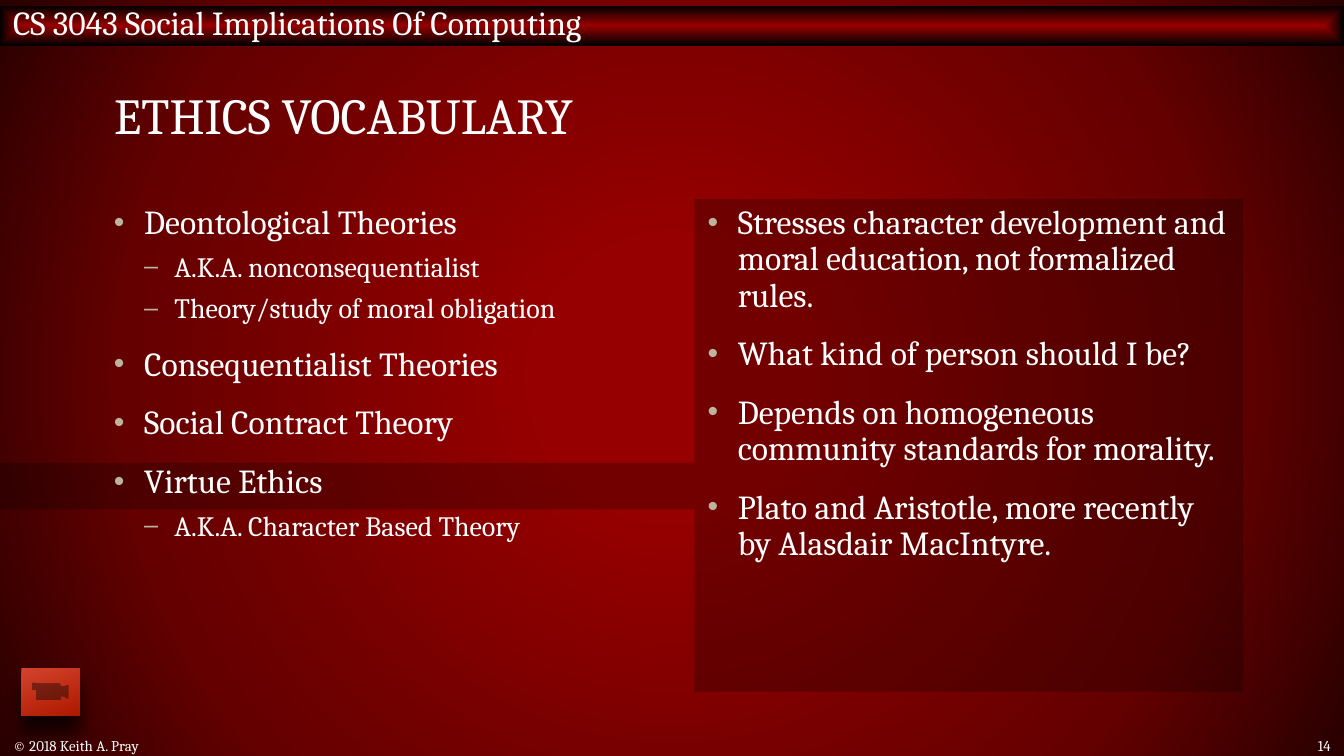
"""Build the ethics vocabulary slide."""
from dataclasses import dataclass

from lxml import etree
from pptx import Presentation
from pptx.dml.color import RGBColor
from pptx.enum.shapes import MSO_SHAPE
from pptx.enum.text import MSO_ANCHOR, MSO_AUTO_SIZE, PP_ALIGN
from pptx.oxml.ns import qn
from pptx.util import Pt

RECTANGLE = MSO_SHAPE.RECTANGLE
MOVIE_BUTTON = MSO_SHAPE.ACTION_BUTTON_MOVIE
TOP, MIDDLE = MSO_ANCHOR.TOP, MSO_ANCHOR.MIDDLE
LEFT, RIGHT = PP_ALIGN.LEFT, PP_ALIGN.RIGHT
NO_AUTO_SIZE = MSO_AUTO_SIZE.NONE
FONT = "Cambria"
COLOURS = {
    "text": "FFFFFF", "bullet": "BCB49E", "black": "000000",
    "red": "960000", "dark_red": "650000", "deep_red": "290000",
    "button_light": "D3432B", "button_dark": "AE1900",
}


@dataclass(frozen=True)
class Box:
    """Position and size in points."""
    left: float
    top: float
    width: float
    height: float

    def lengths(self):
        """Return the four lengths for a new shape."""
        return Pt(self.left), Pt(self.top), Pt(self.width), Pt(self.height)


@dataclass(frozen=True)
class Level:
    """Look of one bullet level."""
    size: float
    indent: float
    space_before: float
    character: str


@dataclass(frozen=True)
class Item:
    """One bulleted line."""
    text: str
    level: int = 0


LEVELS = (Level(18, 16.2, 12, "•"), Level(15, 32.4, 6, "–"))
HANGING = 16.2
COLUMN_TOP, COLUMN_WIDTH, COLUMN_HEIGHT = 106.5, 294, 264
LEFT_COLUMN = Box(54, COLUMN_TOP, COLUMN_WIDTH, COLUMN_HEIGHT)
RIGHT_COLUMN = Box(372, COLUMN_TOP, COLUMN_WIDTH, COLUMN_HEIGHT)
HIGHLIGHT = Box(0, 248, RIGHT_COLUMN.left, 25)
THEORIES = (
    Item("Deontological Theories"),
    Item("A.K.A. nonconsequentialist", 1),
    Item("Theory/study of moral obligation", 1),
    Item("Consequentialist Theories"),
    Item("Social Contract Theory"),
    Item("Virtue Ethics"),
    Item("A.K.A. Character Based Theory", 1),
)
VIRTUE_NOTES = (
    Item("Stresses character development and moral education, not formalized rules."),
    Item("What kind of person should I be?"),
    Item("Depends on homogeneous community standards for morality."),
    Item("Plato and Aristotle, more recently by Alasdair MacIntyre."),
)


def add_child(parent, tag: str, **attributes):
    """Append an XML child and return it."""
    return etree.SubElement(parent, qn(tag), attributes)


def set_gradient(fill, element, stops, path: str = "", angle: int = 0) -> None:
    """Give a fill its colour stops and either a path or an angle."""
    fill.gradient()
    gradient = element.find(".//" + qn("a:gradFill"))
    for child in list(gradient):
        gradient.remove(child)
    stop_list = add_child(gradient, "a:gsLst")
    for position, colour in stops:
        stop = add_child(stop_list, "a:gs", pos=str(position * 1000))
        add_child(stop, "a:srgbClr", val=COLOURS[colour])
    if path:
        shading = add_child(gradient, "a:path", path=path)
        add_child(shading, "a:fillToRect", l="50000", t="50000", r="50000", b="50000")
    else:
        add_child(gradient, "a:lin", ang=str(angle * 60000), scaled="0")


def add_plain_shape(slide, kind, box: Box):
    """Add a shape without line or shadow."""
    shape = slide.shapes.add_shape(kind, *box.lengths())
    shape.shadow.inherit = False
    shape.line.fill.background()
    return shape


def add_shade(slide, box: Box) -> None:
    """Add a translucent black panel."""
    shape = add_plain_shape(slide, RECTANGLE, box)
    shape.fill.solid()
    shape.fill.fore_color.rgb = RGBColor.from_string(COLOURS["black"])
    colour = shape.element.spPr.find(".//" + qn("a:srgbClr"))
    add_child(colour, "a:alpha", val="24000")


def add_run(paragraph, text: str, size: float) -> None:
    """Add one formatted run."""
    run = paragraph.add_run()
    run.text = text
    run.font.name = FONT
    run.font.size = Pt(size)
    run.font.color.rgb = RGBColor.from_string(COLOURS["text"])


def prepare_frame(shape, anchor, top: float = 3.6, bottom: float = 3.6):
    """Set wrapping, anchor and insets and return the text frame."""
    frame = shape.text_frame
    frame.word_wrap = True
    frame.auto_size = NO_AUTO_SIZE
    frame.vertical_anchor = anchor
    frame.margin_left = frame.margin_right = Pt(7.2)
    frame.margin_top, frame.margin_bottom = Pt(top), Pt(bottom)
    return frame


def add_bullets(slide, box: Box, items: tuple[Item, ...]) -> None:
    """Add a column of bulleted text."""
    frame = prepare_frame(slide.shapes.add_textbox(*box.lengths()), TOP)
    for index, item in enumerate(items):
        level = LEVELS[item.level]
        paragraph = frame.add_paragraph() if index else frame.paragraphs[0]
        paragraph.level = item.level
        paragraph.line_spacing = 0.9
        paragraph.space_before = Pt(level.space_before if index else 0)
        properties = paragraph._p.get_or_add_pPr()
        properties.set("marL", str(Pt(level.indent)))
        properties.set("indent", str(-Pt(HANGING)))
        add_child(add_child(properties, "a:buClr"), "a:srgbClr", val=COLOURS["bullet"])
        add_child(properties, "a:buSzPct", val="90000")
        add_child(properties, "a:buFont", typeface="Arial")
        add_child(properties, "a:buChar", char=level.character)
        add_run(paragraph, item.text, level.size)


def add_footer(slide, box: Box, text: str, alignment) -> None:
    """Add one small line at the foot of the slide."""
    frame = prepare_frame(slide.shapes.add_textbox(*box.lengths()), MIDDLE)
    frame.paragraphs[0].alignment = alignment
    add_run(frame.paragraphs[0], text, 8)


def add_header(slide) -> None:
    """Add the course band."""
    header = add_plain_shape(slide, RECTANGLE, Box(0, 3, 720, 21.5))
    set_gradient(header.fill, header.element, ((0, "red"), (100, "black")), path="shape")
    paragraph = prepare_frame(header, MIDDLE, top=0).paragraphs[0]
    paragraph.alignment = LEFT
    add_run(paragraph, "CS 3043 Social Implications Of Computing", 18)


def format_title(slide) -> None:
    """Place and fill the title."""
    title = slide.shapes.title
    title.left, title.top, title.width, title.height = Box(54, 28.5, 612, 72).lengths()
    paragraph = prepare_frame(title, MIDDLE).paragraphs[0]
    paragraph.alignment = LEFT
    paragraph.line_spacing = 0.8
    add_run(paragraph, "ETHICS VOCABULARY", 27)


def add_movie_button(slide) -> None:
    """Add the film button with its shadow."""
    button = add_plain_shape(slide, MOVIE_BUTTON, Box(11.5, 358, 31, 25.5))
    stops = ((0, "button_light"), (100, "button_dark"))
    set_gradient(button.fill, button.element, stops, angle=69)
    effects = button.element.spPr.find(qn("a:effectLst"))
    shadow = add_child(effects, "a:outerShdw", blurRad=str(Pt(9)), dist=str(Pt(9)),
                       dir="5400000", rotWithShape="0")
    colour = add_child(shadow, "a:srgbClr", val=COLOURS["black"])
    add_child(colour, "a:alpha", val="70000")


def main() -> None:
    """Build and save the presentation."""
    presentation = Presentation()
    presentation.slide_width, presentation.slide_height = Pt(720), Pt(405)
    slide = presentation.slides.add_slide(presentation.slide_layouts[5])
    set_gradient(slide.background.fill, slide.element,
                 ((17, "red"), (71, "dark_red"), (100, "deep_red")), path="circle")
    add_header(slide)
    for box in (HIGHLIGHT, RIGHT_COLUMN):
        add_shade(slide, box)
    format_title(slide)
    add_bullets(slide, RIGHT_COLUMN, VIRTUE_NOTES)
    add_bullets(slide, LEFT_COLUMN, THEORIES)
    add_footer(slide, Box(0, 393.5, 438, 11.5), "© 2018 Keith A. Pray", LEFT)
    add_footer(slide, Box(671, 393.5, 49, 11.5), "14", RIGHT)
    add_movie_button(slide)
    presentation.save("out.pptx")


if __name__ == "__main__":
    main()
